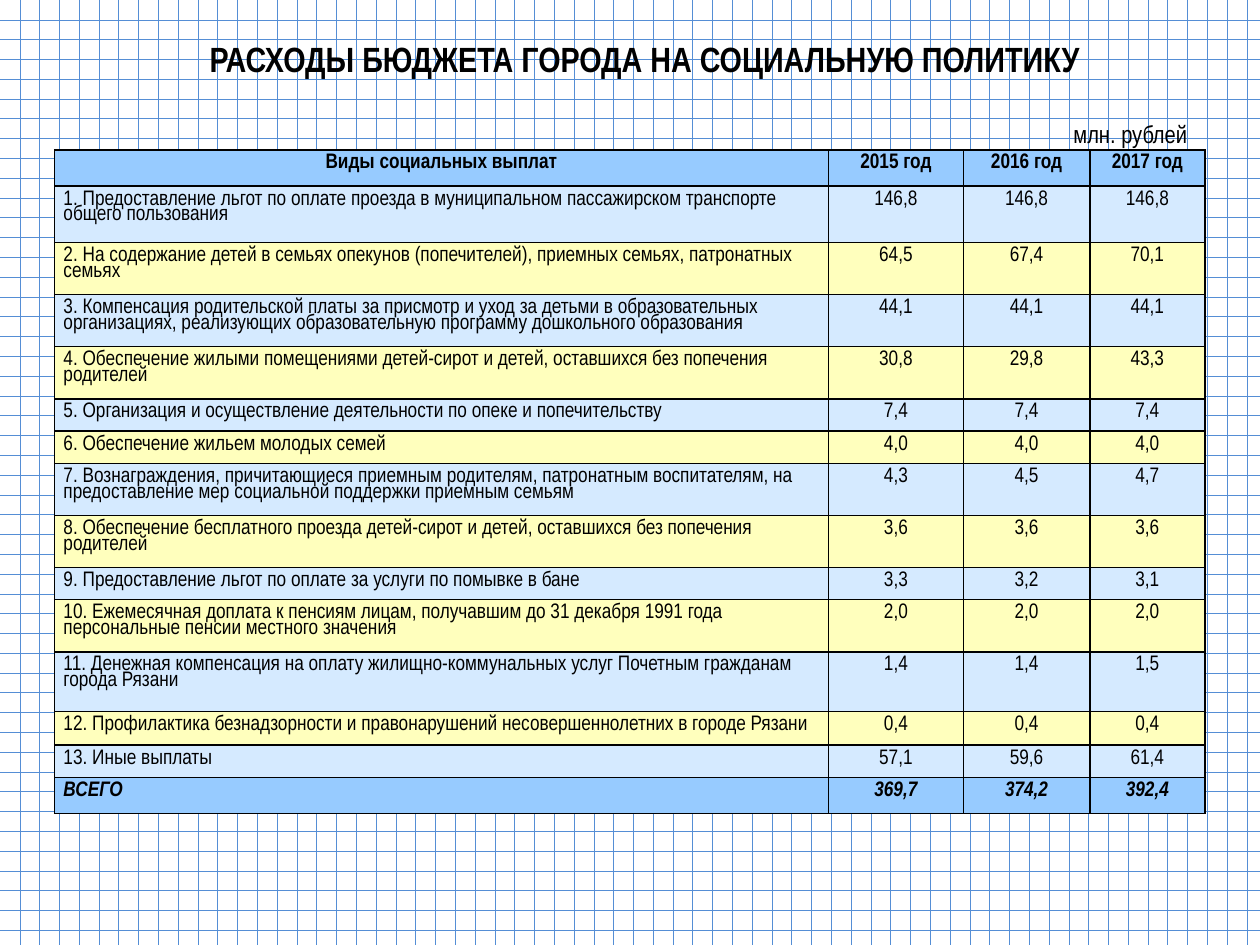
from lxml.etree import SubElement
from pptx import Presentation
from pptx.dml.color import RGBColor
from pptx.enum.dml import MSO_PATTERN
from pptx.enum.text import MSO_ANCHOR, MSO_AUTO_SIZE, PP_ALIGN
from pptx.oxml.ns import qn
from pptx.util import Cm, Pt

COLORS = {
    "text": "000000",
    "border": "000000",
    "grid": "558ED5",
    "paper": "FFFFFF",
    "accent": "97CBFF",
    "odd": "D5EAFF",
    "even": "FFFFBD",
}
HEADER = ("Виды социальных выплат", "2015 год", "2016 год", "2017 год")
PAYMENTS = [
    ("1. Предоставление льгот по оплате проезда в муниципальном пассажирском транспорте общего пользования", "146,8", "146,8", "146,8"),
    ("2. На содержание детей в семьях опекунов (попечителей), приемных семьях, патронатных семьях", "64,5", "67,4", "70,1"),
    ("3. Компенсация родительской платы за присмотр и уход за детьми в образовательных организациях, реализующих образовательную программу дошкольного образования", "44,1", "44,1", "44,1"),
    ("4. Обеспечение жилыми помещениями детей-сирот и детей, оставшихся без попечения родителей", "30,8", "29,8", "43,3"),
    ("5. Организация и осуществление деятельности по опеке и попечительству", "7,4", "7,4", "7,4"),
    ("6. Обеспечение жильем молодых семей", "4,0", "4,0", "4,0"),
    ("7. Вознаграждения, причитающиеся приемным родителям, патронатным воспитателям, на предоставление мер социальной поддержки приемным семьям", "4,3", "4,5", "4,7"),
    ("8. Обеспечение бесплатного проезда детей-сирот и детей, оставшихся без попечения родителей", "3,6", "3,6", "3,6"),
    ("9. Предоставление льгот по оплате за услуги по помывке в бане", "3,3", "3,2", "3,1"),
    ("10. Ежемесячная доплата к пенсиям лицам, получавшим до 31 декабря 1991 года персональные пенсии местного значения", "2,0", "2,0", "2,0"),
    ("11. Денежная компенсация на оплату жилищно-коммунальных услуг Почетным гражданам города Рязани", "1,4", "1,4", "1,5"),
    ("12. Профилактика безнадзорности и правонарушений несовершеннолетних в городе Рязани", "0,4", "0,4", "0,4"),
    ("13. Иные выплаты", "57,1", "59,6", "61,4"),
]
TOTAL = ("ВСЕГО", "369,7", "374,2", "392,4")
COL_WIDTHS = (15.6, 2.72, 2.55, 2.32)
ONE_LINE, TWO_LINES, BAND = 0.65, 1.05, 0.73
ROW_HEIGHTS = (
    BAND, 1.14, *[TWO_LINES] * 3, *[ONE_LINE] * 2, *[TWO_LINES] * 2,
    ONE_LINE, TWO_LINES, 1.2, 0.68, ONE_LINE, BAND,
)


def rgb(name):
    return RGBColor.from_string(COLORS[name])


class Deck:
    """Builds slides in one consistent style."""

    font = "Arial Narrow"

    def __init__(self):
        self.prs = Presentation()
        self.prs.slide_width, self.prs.slide_height = Cm(25.4), Cm(19.05)
        self.s = None

    def add_slide(self):
        self.s = self.prs.slides.add_slide(self.prs.slide_layouts[5])
        fill = self.s.background.fill
        fill.patterned()
        fill.pattern = MSO_PATTERN.DOTTED_GRID
        fill.fore_color.rgb, fill.back_color.rgb = rgb("grid"), rgb("paper")

    def set_text(self, tf, text, size, align, bold=False, italic=False):
        tf.text = text
        p = tf.paragraphs[0]
        p.alignment = align
        for r in p.runs:
            r.font.name, r.font.size = self.font, Pt(size)
            r.font.bold, r.font.italic = bold, italic
            r.font.color.rgb = rgb("text")
        return p

    def title(self, text, left, top, width, height):
        sp = self.s.shapes.title
        sp.left, sp.top, sp.width, sp.height = map(Cm, (left, top, width, height))
        sp.text_frame.vertical_anchor = MSO_ANCHOR.MIDDLE
        self.set_text(sp.text_frame, text, 20, PP_ALIGN.CENTER, bold=True)

    def label(self, text, left, top, width, height):
        sp = self.s.shapes.add_textbox(*map(Cm, (left, top, width, height)))
        tf = sp.text_frame
        tf.word_wrap = True
        tf.auto_size = MSO_AUTO_SIZE.SHAPE_TO_FIT_TEXT
        tf.vertical_anchor = MSO_ANCHOR.MIDDLE
        self.set_text(tf, text, 14, PP_ALIGN.JUSTIFY)

    def border(self, cell):
        tcPr = cell._tc.get_or_add_tcPr()
        for i, side in enumerate(("lnL", "lnR", "lnT", "lnB")):
            ln = SubElement(tcPr, qn(f"a:{side}"), w=str(Pt(1)))
            fill = SubElement(ln, qn("a:solidFill"))
            SubElement(fill, qn("a:srgbClr"), val=COLORS["border"])
            tcPr.insert(i, ln)

    def cell(self, cell, text, fill, align, bold, italic):
        cell.margin_left = cell.margin_right = Cm(0.18)
        cell.margin_top = cell.margin_bottom = Cm(0.13)
        cell.fill.solid()
        cell.fill.fore_color.rgb = rgb(fill)
        self.border(cell)
        p = self.set_text(cell.text_frame, text, 12, align, bold, italic)
        p.line_spacing = 0.8

    def table(self, rows, widths, heights, left, top):
        size = map(Cm, (left, top, sum(widths), sum(heights)))
        table = self.s.shapes.add_table(len(rows), len(widths), *size).table
        for column, width in zip(table.columns, widths):
            column.width = Cm(width)
        last = len(rows) - 1
        for i, (values, height) in enumerate(zip(rows, heights)):
            table.rows[i].height = Cm(height)
            edge = i in (0, last)
            fill = "accent" if edge else "odd" if i % 2 else "even"
            for j, text in enumerate(values):
                align = PP_ALIGN.LEFT if i and not j else PP_ALIGN.CENTER
                self.cell(table.cell(i, j), text, fill, align, edge, i == last)


def main():
    deck = Deck()
    deck.add_slide()
    deck.title("РАСХОДЫ БЮДЖЕТА ГОРОДА НА СОЦИАЛЬНУЮ ПОЛИТИКУ", 2.1, 0.36, 21.8, 1.65)
    deck.table([HEADER, *PAYMENTS, TOTAL], COL_WIDTHS, ROW_HEIGHTS, 1.1, 3.02)
    deck.label("млн. рублей", 21.39, 2.26, 3, 0.86)
    deck.prs.save("out.pptx")


if __name__ == "__main__":
    main()
